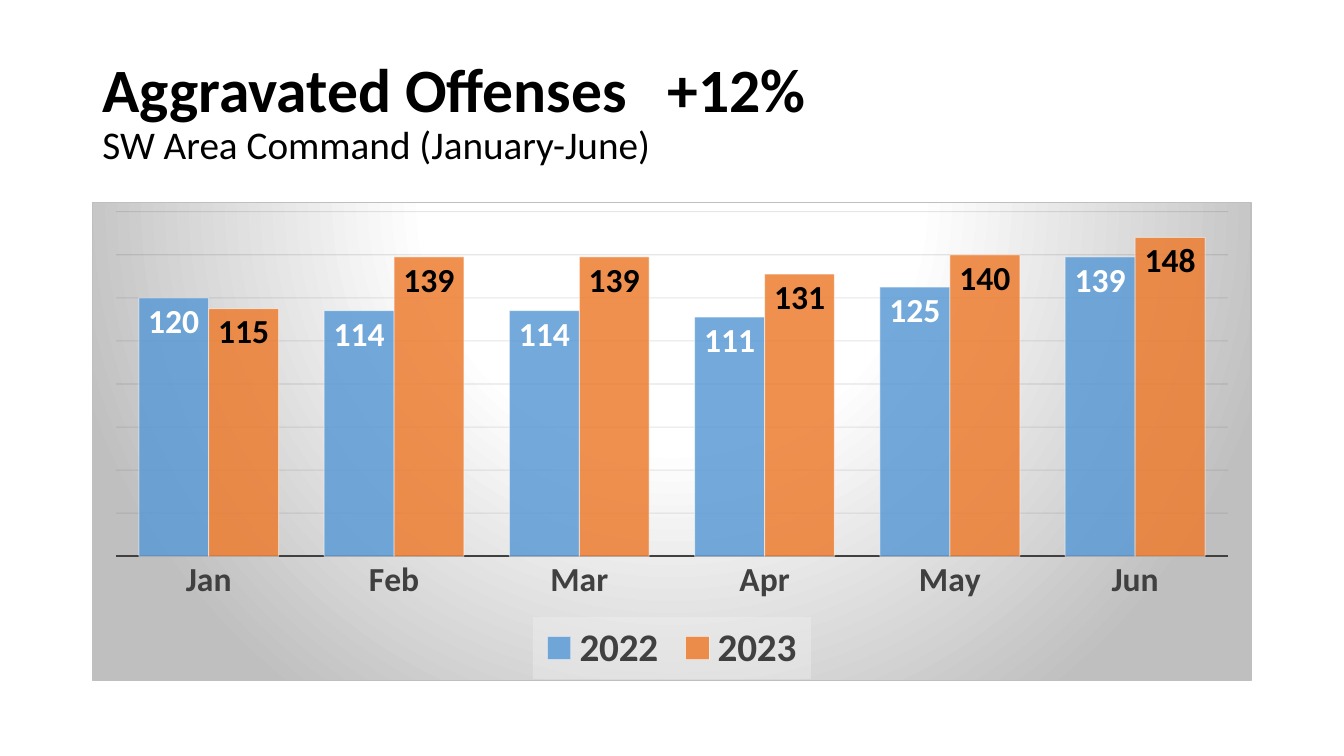
from dataclasses import dataclass

from lxml import etree
from pptx import Presentation
from pptx.chart.chart import Chart
from pptx.chart.data import CategoryChartData
from pptx.dml.color import RGBColor
from pptx.enum.chart import XL_CHART_TYPE, XL_LABEL_POSITION, XL_LEGEND_POSITION, XL_TICK_MARK
from pptx.enum.text import MSO_ANCHOR
from pptx.oxml import parse_xml
from pptx.oxml.ns import nsdecls, qn
from pptx.util import Cm, Pt

CLUSTERED = XL_CHART_TYPE.COLUMN_CLUSTERED
INSIDE_END = XL_LABEL_POSITION.INSIDE_END
BOTTOM = XL_LEGEND_POSITION.BOTTOM
NO_TICK = XL_TICK_MARK.NONE
MIDDLE = MSO_ANCHOR.MIDDLE

FONT = "Calibri"
COLORS = {
    "black": "000000",
    "white": "FFFFFF",
    "axis": "404040",
    "grid": "0D0D0D",
    "edge": "BFBFBF",
    "legend": "F2F2F2",
    "blue": "5B9BD5",
    "orange": "ED7D31",
}
MONTHS = ["Jan", "Feb", "Mar", "Apr", "May", "Jun"]
LEFT, WIDTH = Cm(2.33), Cm(29.21)


@dataclass
class Year:
    name: str
    offenses: list[int]
    fill: str
    label: str


@dataclass
class Heading:
    text: str
    size: int
    bold: bool


YEARS = [
    Year("2022", [120, 114, 114, 111, 125, 139], "blue", "white"),
    Year("2023", [115, 139, 139, 131, 140, 148], "orange", "black"),
]
HEADINGS = [
    Heading("Aggravated Offenses\t+12%", 44, True),
    Heading("SW Area Command (January-June)", 28, False),
]


def rgb(color: str) -> RGBColor:
    return RGBColor.from_string(COLORS[color])


def style_font(font, size: int, color: str, bold: bool = True) -> None:
    font.name, font.size, font.bold = FONT, Pt(size), bold
    font.color.rgb = rgb(color)


def style_line(line, color: str, width: float) -> None:
    line.color.rgb = rgb(color)
    line.width = Pt(width)


def set_alpha(parent, percent: int) -> None:
    for color in parent.iter(qn("a:srgbClr")):
        etree.SubElement(color, qn("a:alpha")).set("val", str(percent * 1000))


def manual_layout(x: float, y: float, w: float, h: float, target: str = ""):
    inner = f'<c:layoutTarget val="{target}"/>' if target else ""
    modes = "".join(f'<c:{axis}Mode val="edge"/>' for axis in "xy")
    sizes = "".join(f'<c:{key} val="{val}"/>' for key, val in zip("xywh", (x, y, w, h)))
    return parse_xml(
        f'<c:layout {nsdecls("c")}><c:manualLayout>{inner}{modes}{sizes}</c:manualLayout></c:layout>'
    )


def drop_layout(parent) -> None:
    for layout in parent.findall(qn("c:layout")):
        parent.remove(layout)


def add_headings(slide) -> None:
    frame = slide.shapes.add_textbox(LEFT, Cm(1.02), WIDTH, Cm(3.68)).text_frame
    frame.word_wrap = True
    frame.vertical_anchor = MIDDLE
    for index, heading in enumerate(HEADINGS):
        paragraph = frame.add_paragraph() if index else frame.paragraphs[0]
        paragraph.text = heading.text
        paragraph.line_spacing = 0.9
        style_font(paragraph.font, heading.size, "black", heading.bold)
    tabs = parse_xml(
        f'<a:tabLst {nsdecls("a")}><a:tab pos="{Cm(14.24)}" algn="l"/></a:tabLst>'
    )
    properties = frame.paragraphs[0]._p.get_or_add_pPr()
    properties.find(qn("a:defRPr")).addprevious(tabs)


def style_background(chart: Chart) -> None:
    stops = "".join(
        f'<a:gs pos="{position * 1000}"><a:srgbClr val="{COLORS[color]}"/></a:gs>'
        for position, color in ((0, "white"), (39, "white"), (100, "edge"))
    )
    background = parse_xml(
        f'<c:spPr {nsdecls("c", "a")}><a:gradFill><a:gsLst>{stops}</a:gsLst>'
        '<a:path path="circle"><a:fillToRect l="50000" t="-80000" r="50000" b="180000"/></a:path>'
        f'</a:gradFill><a:ln w="{Pt(0.75)}"><a:solidFill><a:srgbClr val="{COLORS["edge"]}"/>'
        '</a:solidFill></a:ln></c:spPr>'
    )
    chart._chartSpace.find(qn("c:chart")).addnext(background)


def style_axes(chart: Chart) -> None:
    months = chart.category_axis
    months.major_tick_mark = months.minor_tick_mark = NO_TICK
    style_font(months.tick_labels.font, 24, "axis")
    style_line(months.format.line, "axis", 1.5)
    counts = chart.value_axis
    counts.visible = False
    counts.minimum_scale, counts.maximum_scale, counts.major_unit = 0, 160, 20
    counts.has_major_gridlines = True
    gridlines = counts.major_gridlines.format.line
    style_line(gridlines, "grid", 0.75)
    set_alpha(counts._element.find(qn("c:majorGridlines")), 10)


def style_legend(chart: Chart) -> None:
    chart.has_legend = True
    legend = chart.legend
    legend.position = BOTTOM
    legend.include_in_layout = False
    style_font(legend.font, 28, "axis")
    element = legend._element
    drop_layout(element)
    element.find(qn("c:legendPos")).addnext(manual_layout(0.38, 0.87, 0.24, 0.13))
    panel = parse_xml(
        f'<c:spPr {nsdecls("c", "a")}><a:solidFill><a:srgbClr val="{COLORS["legend"]}"/>'
        '</a:solidFill><a:ln><a:noFill/></a:ln></c:spPr>'
    )
    set_alpha(panel, 39)
    element.find(qn("c:txPr")).addprevious(panel)


def add_offenses_chart(slide) -> None:
    data = CategoryChartData()
    data.categories = MONTHS
    for year in YEARS:
        data.add_series(year.name, year.offenses)
    chart = slide.shapes.add_chart(CLUSTERED, LEFT, Cm(5.08), WIDTH, Cm(12.09), data).chart
    chart.has_title = False
    style_font(chart.font, 10, "black", False)
    style_background(chart)
    style_axes(chart)
    style_legend(chart)

    plot = chart.plots[0]
    plot.gap_width, plot.overlap = 65, 0
    plot.vary_by_categories = False
    for year, columns in zip(YEARS, plot.series):
        columns.format.fill.solid()
        columns.format.fill.fore_color.rgb = rgb(year.fill)
        style_line(columns.format.line, "white", 0.75)
        properties = columns._element.find(qn("c:spPr"))
        set_alpha(properties.find(qn("a:solidFill")), 85)
        set_alpha(properties.find(qn("a:ln")), 50)
        labels = columns.data_labels
        labels.show_value = True
        labels.position = INSIDE_END
        style_font(labels.font, 24, year.label)

    plot_area = chart._chartSpace.find(qn("c:chart")).find(qn("c:plotArea"))
    drop_layout(plot_area)
    plot_area.insert(0, manual_layout(0.02, 0.02, 0.96, 0.72, "inner"))


def main() -> None:
    deck = Presentation()
    deck.slide_width, deck.slide_height = Cm(33.87), Cm(19.05)
    slide = deck.slides.add_slide(deck.slide_layouts[6])
    add_headings(slide)
    add_offenses_chart(slide)
    deck.save("out.pptx")


if __name__ == "__main__":
    main()
